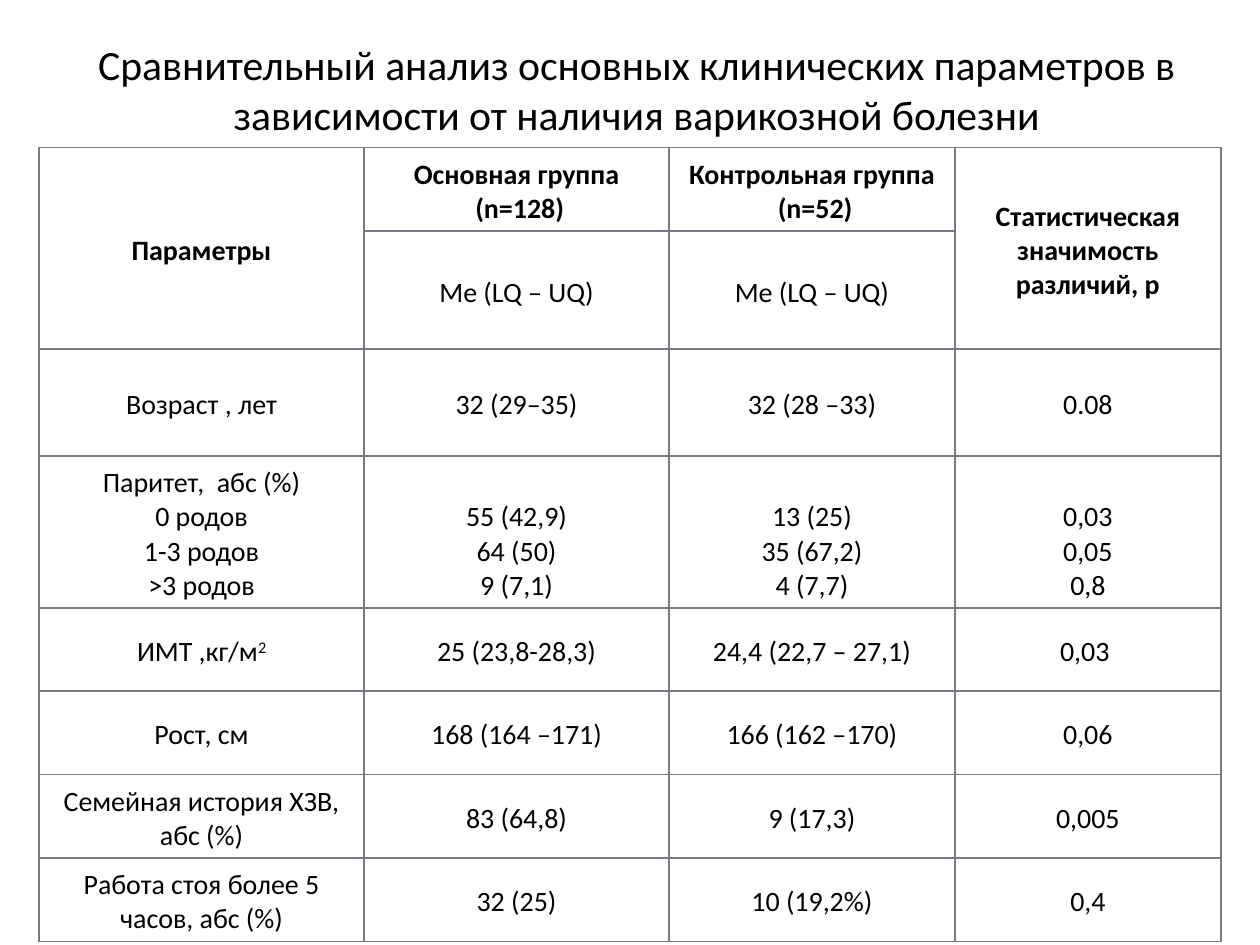
from dataclasses import dataclass

from lxml.etree import SubElement
from pptx import Presentation
from pptx.dml.color import RGBColor
from pptx.enum.text import MSO_ANCHOR, MSO_AUTO_SIZE, PP_ALIGN
from pptx.oxml.ns import qn
from pptx.util import Inches, Pt


@dataclass(frozen=True)
class Theme:
    font: str = "Calibri"
    ink: str = "000000"
    paper: str = "FFFFFF"
    rule: str = "777C84"
    rule_width: float = 1
    title_size: float = 23.8
    cell_size: float = 16


THEME = Theme()
TITLE = ("Сравнительный анализ основных клинических параметров в "
         "зависимости от наличия варикозной болезни")
COLUMN_WIDTHS = [2.58, 2.42, 2.27, 2.11]
ROW_HEIGHTS = [0.56, 0.47, 0.85, 0.57] + [0.66] * 4
PARITY_ROW = 3
SUPERSCRIPT = "^"  # text after this mark is raised
# None stands for a cell merged with the one above it
ROWS = [
    ["Параметры", "Основная группа\n (n=128)", "Контрольная группа\n (n=52)",
     "Статистическая значимость различий, р"],
    [None, "Ме (LQ – UQ)", "Ме (LQ – UQ)", None],
    ["Возраст , лет", "32 (29–35)", "32 (28 –33)", "0.08"],
    ["Паритет,  абс (%)\n0 родов\n1-3 родов\n>3 родов",
     "55 (42,9)\n64 (50)\n9 (7,1)", "13 (25)\n35 (67,2)\n4 (7,7)",
     "0,03\n0,05\n0,8"],
    ["ИМТ ,кг/м^2", "25 (23,8-28,3)", "24,4 (22,7 – 27,1)", "0,03 "],
    ["Рост, см", "168 (164 –171)", "166 (162 –170)", "0,06"],
    ["Семейная история ХЗВ, абс (%)", "83 (64,8)", "9 (17,3)", "0,005"],
    ["Работа стоя более 5 часов, абс (%)", "32 (25)", "10 (19,2%)", "0,4"],
]


def write_lines(frame, text, size, bold=False):
    for index, line in enumerate(text.split("\n")):
        paragraph = frame.add_paragraph() if index else frame.paragraphs[0]
        paragraph.alignment = PP_ALIGN.CENTER
        for part, words in enumerate(line.split(SUPERSCRIPT)):
            run = paragraph.add_run()
            run.text = words
            font = run.font
            font.name, font.size, font.bold = THEME.font, Pt(size), bold
            font.color.rgb = RGBColor.from_string(THEME.ink)
            if part:
                font._element.set("baseline", "30000")


def draw_borders(cell):
    properties = cell._tc.get_or_add_tcPr()
    for side in ("a:lnL", "a:lnR", "a:lnT", "a:lnB"):
        line = SubElement(properties, qn(side), w=str(Pt(THEME.rule_width)))
        fill = SubElement(line, qn("a:solidFill"))
        SubElement(fill, qn("a:srgbClr"), val=THEME.rule)


def place_title(slide, left, top, width, height):
    title = slide.shapes.title
    title.left, title.top, title.width, title.height = left, top, width, height
    frame = title.text_frame
    frame.word_wrap = True
    frame.auto_size = MSO_AUTO_SIZE.NONE
    frame.vertical_anchor = MSO_ANCHOR.TOP
    frame.margin_top = Inches(0.08)
    write_lines(frame, TITLE, THEME.title_size)


def place_comparison(slide, left, top, width, height):
    table = slide.shapes.add_table(
        len(ROWS), len(COLUMN_WIDTHS), left, top, width, height).table
    table.first_row = table.horz_banding = False
    for column, share in zip(table.columns, COLUMN_WIDTHS):
        column.width = int(width * share / sum(COLUMN_WIDTHS))
    for row, share in zip(table.rows, ROW_HEIGHTS):
        row.height = int(height * share / sum(ROW_HEIGHTS))

    for r, texts in enumerate(ROWS):
        for c, text in enumerate(texts):
            cell = table.cell(r, c)
            draw_borders(cell)
            cell.fill.solid()
            cell.fill.fore_color.rgb = RGBColor.from_string(THEME.paper)
            if text is None:
                table.cell(r - 1, c).merge(cell)
                continue
            cell.margin_left = cell.margin_right = Inches(0.1)
            cell.margin_top, cell.margin_bottom = Inches(0.08), Inches(0.04)
            # Parity figures line up with the last lines of their label
            cell.vertical_anchor = (MSO_ANCHOR.BOTTOM if r == PARITY_ROW and c
                                    else MSO_ANCHOR.MIDDLE)
            write_lines(cell.text_frame, text, THEME.cell_size, bold=r == 0)


def main():
    presentation = Presentation()
    presentation.slide_width, presentation.slide_height = Inches(10), Inches(7.5)
    slide = presentation.slides.add_slide(presentation.slide_layouts[5])
    place_title(slide, Inches(0.55), Inches(0.23), Inches(9), Inches(0.75))
    place_comparison(slide, Inches(0.31), Inches(1.17),
                     Inches(sum(COLUMN_WIDTHS)), Inches(sum(ROW_HEIGHTS)))
    presentation.save("out.pptx")


if __name__ == "__main__":
    main()
